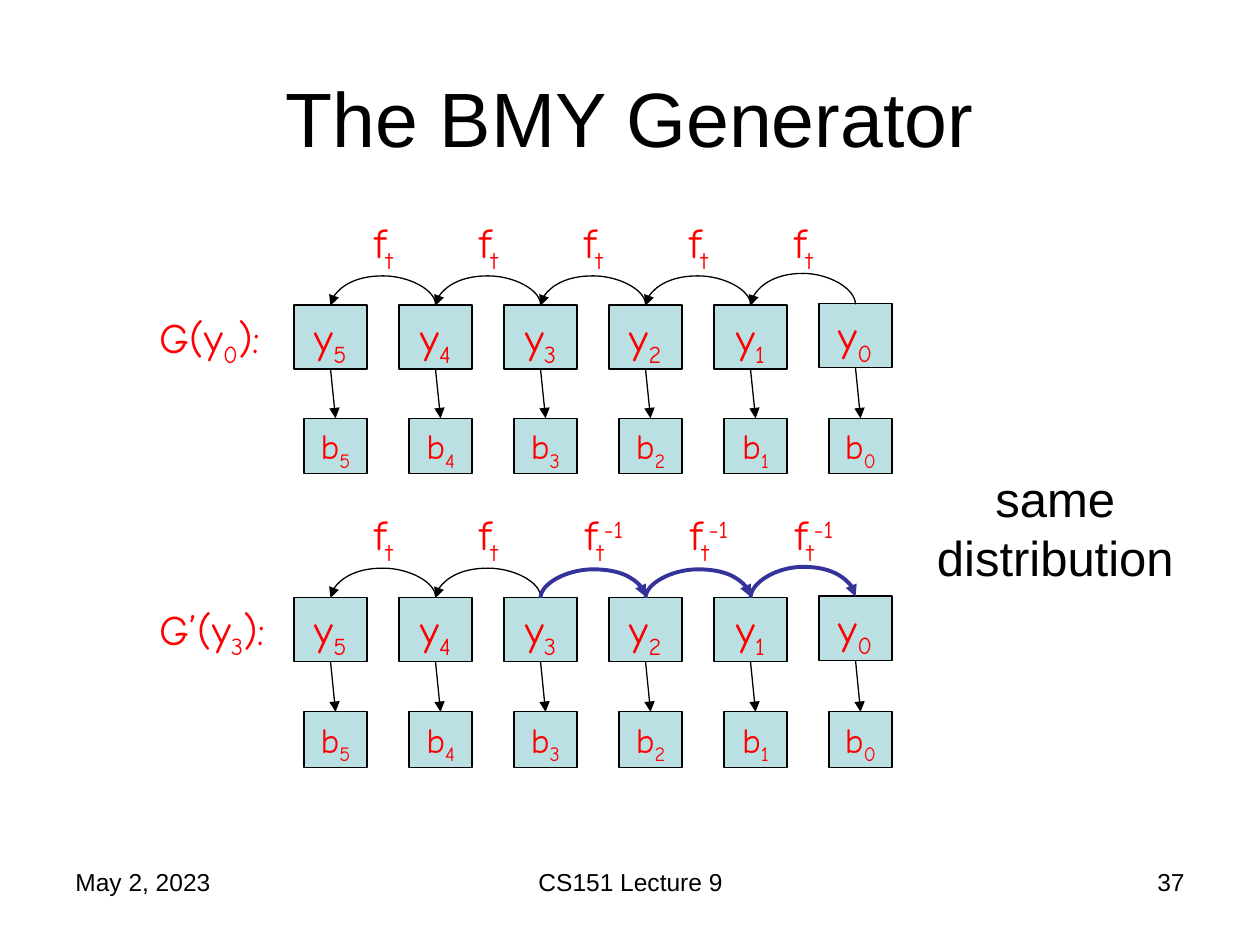
from pptx import Presentation
from pptx.dml.color import RGBColor
from pptx.enum import shapes, text
from pptx.oxml import ns
from pptx.util import Inches, Pt
from lxml import etree

HUES = {"ink": "000000", "red": "FF0000", "box": "BBE0E3", "blue": "333399"}
HAND = "Comic Neue"
STEP = 5 / 6  # gap between columns
EDGE = 7 / 3  # left side of the first column
LAST = 5  # highest index, in the leftmost column
SUB, SUP = -25000, 30000
MID, LEFT, RIGHT = text.PP_ALIGN.CENTER, text.PP_ALIGN.LEFT, text.PP_ALIGN.RIGHT


def hue(name):
    return RGBColor.from_string(HUES[name])


def write(shape, parts, size, font=HAND, tint="red", align=MID, grow=True):
    """Fill a shape with (text, baseline) parts."""
    frame = shape.text_frame
    frame.word_wrap = True
    frame.vertical_anchor = text.MSO_ANCHOR.TOP
    if grow:
        frame.auto_size = text.MSO_AUTO_SIZE.SHAPE_TO_FIT_TEXT
    para = frame.paragraphs[0]
    para.alignment = align
    for words, base in parts:
        run = para.add_run()
        run.text = words
        run.font.size = Pt(size)
        run.font.name = font
        run.font.color.rgb = hue(tint)
        if base:
            run.font._element.set("baseline", str(base))


def label(slide, area, parts, size=24, **style):
    box = slide.shapes.add_textbox(*map(Inches, area))
    write(box, parts, size, **style)


def block(slide, area, parts, size):
    box = slide.shapes.add_shape(shapes.MSO_SHAPE.RECTANGLE, *map(Inches, area))
    box.shadow.inherit = False
    box.fill.solid()
    box.fill.fore_color.rgb = hue("box")
    box.line.color.rgb = hue("ink")
    box.line.width = Pt(0.75)
    write(box, parts, size)


def arrow(slide, kind, start, end, tint="ink", width=0.75):
    link = slide.shapes.add_connector(kind, *map(Inches, start + end))
    link.line.color.rgb = hue(tint)
    link.line.width = Pt(width)
    tip = etree.SubElement(link.line._get_or_add_ln(), ns.qn("a:tailEnd"))
    tip.set("type", "triangle")
    etree.SubElement(link._element.spPr, ns.qn("a:effectLst"))
    return link


def arc(slide, mid, top, rise, back):
    """Arch over two neighbouring boxes, leftward when back is true."""
    thin = 0.01
    near = (mid - thin / 2, top - STEP / 2)
    far = (mid + thin / 2, top + STEP / 2)
    curve = shapes.MSO_CONNECTOR.CURVE
    if back:
        link = arrow(slide, curve, far, near)
    else:
        link = arrow(slide, curve, near, far, "blue", 2.25)
    # A quarter turn makes the bend point upward
    props = link._element.spPr
    props.find(ns.qn("a:xfrm")).set("rot", "16200000")
    geom = props.find(ns.qn("a:prstGeom"))
    for old in geom.findall(ns.qn("a:avLst")):
        geom.remove(old)
    guides = etree.SubElement(geom, ns.qn("a:avLst"))
    bend = round(rise / thin * 100000) * (-1 if back else 1)
    etree.SubElement(guides, ns.qn("a:gd"), name="adj1", fmla=f"val {bend}")


def chain(slide, top, low, name, seed, turns):
    """One generator: y boxes, b boxes and the arcs between the y boxes."""
    label(slide, (1.17, top, 1.17, 0.5),
          [(name + "(y", 0), (str(seed), SUB), ("):", 0)], align=LEFT)
    for col in range(LAST + 1):
        index = LAST - col
        left = EDGE + col * STEP
        high = top - 0.01 if index == 0 else top
        block(slide, (left, high, 0.58, 0.51),
              [("y", 0), (str(index), SUB)], 24)
        block(slide, (left + 0.08, low, 0.5, 0.44),
              [("b", 0), (str(index), SUB)], 20)
        arrow(slide, shapes.MSO_CONNECTOR.STRAIGHT,
              (left + 0.29, high + 0.51), (left + 0.33, low))
    for col in range(LAST):
        left = EDGE + col * STEP
        back = col < turns
        rise = 0.25 if col == LAST - 1 else 0.23
        arc(slide, left + 0.29 + STEP / 2, top, rise, back)
        parts = [("f", 0), ("t", SUB)] + ([] if back else [("-1", SUP)])
        label(slide, (left + 0.42, top - 0.75, 0.58 if back else 0.75, 0.5), parts)


def main():
    deck = Presentation()
    deck.slide_width, deck.slide_height = Inches(10), Inches(7.5)
    slide = deck.slides.add_slide(deck.slide_layouts[5])

    # Title
    title = slide.shapes.title
    title.left, title.top, title.width, title.height = map(Inches, (0.5, 0.3, 9, 1.25))
    write(title, [("The BMY Generator", 0)], 44, "Arial", "ink", grow=False)
    title.text_frame.vertical_anchor = text.MSO_ANCHOR.MIDDLE

    # Generators: the second one runs forward from y3
    chain(slide, 2.42, 3.32, "G", 0, LAST)
    chain(slide, 4.74, 5.65, "G’", 3, 2)

    # Remark
    label(slide, (7.25, 3.67, 2.25, 1.03), [("same distribution", 0)], 28,
          font="Arial", tint="ink")

    # Footer
    for left, width, words, align in (
        (0.5, 2.33, "May 2, 2023", LEFT),
        (3.42, 3.17, "CS151 Lecture 9", MID),
        (7.17, 2.33, "37", RIGHT),
    ):
        label(slide, (left, 6.83, width, 0.52), [(words, 0)], 14,
              font="Arial", tint="ink", align=align, grow=False)

    deck.save("out.pptx")


if __name__ == "__main__":
    main()
